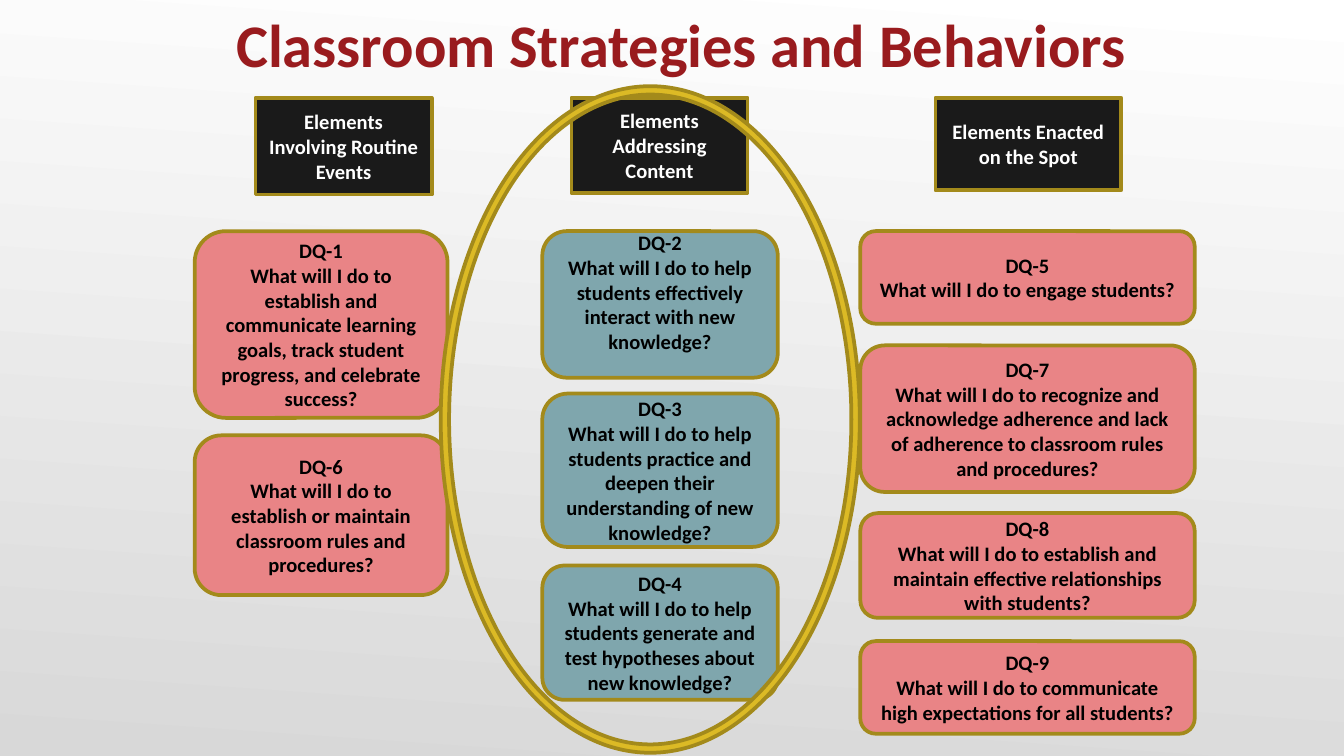
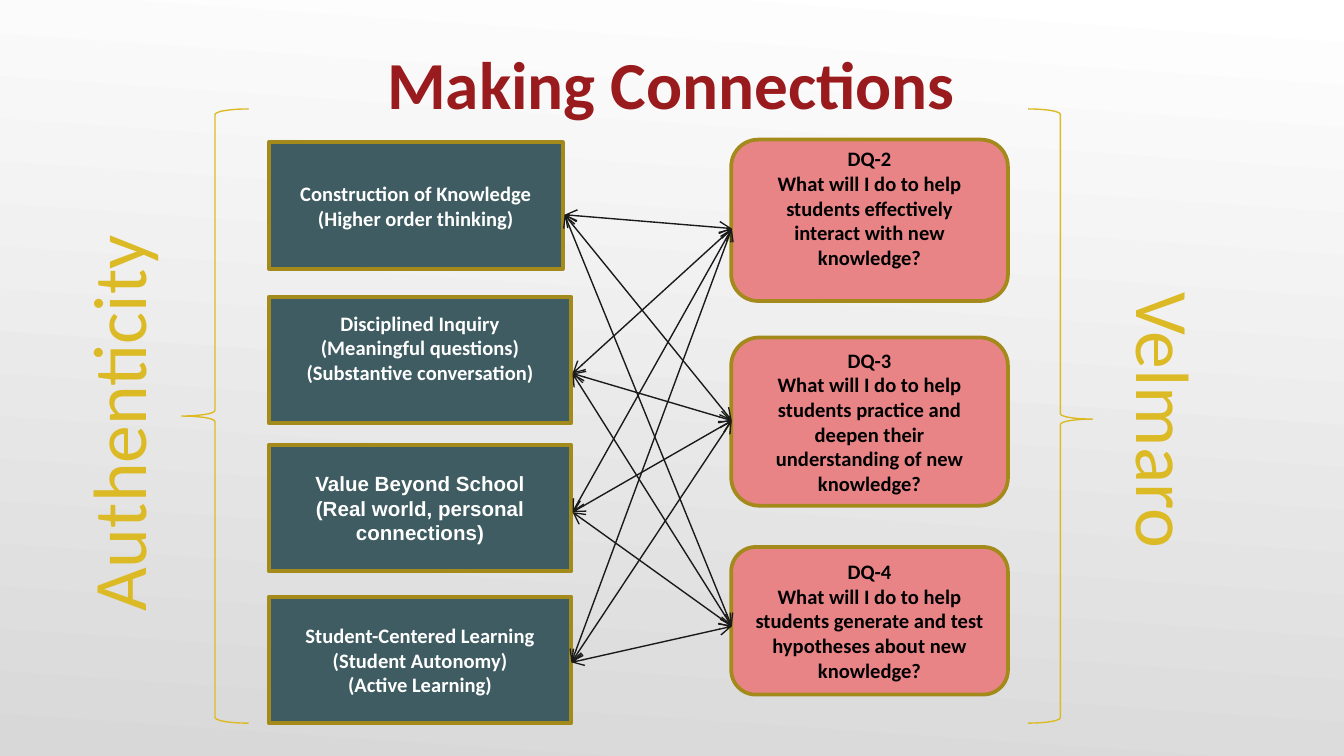
from itertools import product
from lxml.etree import SubElement as Sub
from pptx import Presentation
from pptx.dml.color import RGBColor as Rgb
from pptx.enum.shapes import MSO_CONNECTOR as Link, MSO_SHAPE as Form
from pptx.enum.text import MSO_ANCHOR as Anchor, PP_ALIGN as Align
from pptx.oxml.ns import qn
from pptx.util import Cm, Pt

WHITE = Rgb(0xFF, 0xFF, 0xFF)
GREY = Rgb(0xD8, 0xD8, 0xD8)
BLACK = Rgb(0, 0, 0)
INK = Rgb(0x1A, 0x1A, 0x1A)
RED = Rgb(0x99, 0x1B, 0x1E)
PINK = Rgb(0xE9, 0x84, 0x86)
BLUE = Rgb(0x7F, 0xA6, 0xAD)
TEAL = Rgb(0x3E, 0x5C, 0x61)
GOLD = Rgb(0xDC, 0xBA, 0x25)
EDGE = Rgb(0xA3, 0x8A, 0x1B)

ASKS = {
    1: "establish and communicate learning goals, track student progress, and celebrate success?",
    2: "help students effectively interact with new knowledge?",
    3: "help students practice and deepen their understanding of new knowledge?",
    4: "help students generate and test hypotheses about new knowledge?",
    5: "engage students?",
    6: "establish or maintain classroom rules and procedures?",
    7: "recognize and acknowledge adherence and lack of adherence to classroom rules and procedures?",
    8: "establish and maintain effective relationships with students?",
    9: "communicate high expectations for all students?",
}
HEADS = [
    ("Elements Involving Routine Events", (4.83, 1.85, 3.33, 1.83)),
    ("Elements Addressing Content", (10.8, 1.85, 3.33, 1.8)),
    ("Elements Enacted on the Spot", (17.68, 1.85, 3.51, 1.75)),
]
GROUPS = [
    (3.68, 4.78, PINK, [(1, 4.37, 3.53), (6, 8.23, 3.02)]),
    (10.25, 4.45, BLUE, [(2, 4.37, 2.77), (3, 7.44, 2.9), (4, 10.69, 2.54)]),
    (16.26, 6.32, PINK, [(5, 4.37, 1.75), (7, 6.53, 2.77), (8, 9.7, 1.98), (9, 12.12, 1.75)]),
]
RING = (8.33, 1.63, 7.92, 12.6)

TRAITS = [
    ("Construction of Knowledge\n(Higher order thinking)", 2.69, 5.56, "Calibri", 0),
    ("Disciplined Inquiry\n(Meaningful questions)\n(Substantive conversation)", 5.61, 5.72, "Calibri", 0.47),
    ("Value Beyond School\n(Real world, personal connections)", 8.41, 5.72, "Arial", 0),
    ("Student-Centered Learning\n(Student Autonomy)\n(Active Learning)", 11.28, 5.72, "Calibri", 0),
]
GOALS = (13.82, 5.23, PINK, [(2, 2.64, 3.05), (3, 6.38, 3.18), (4, 10.34, 2.79)])
STARTS = [(10.67, 4.06), (10.82, 7.06), (10.82, 9.68), (10.8, 12.52)]
ENDS = [(13.83, 4.32), (13.83, 7.95), (13.83, 11.84)]
BRACES = [
    (Form.LEFT_BRACE, (3.43, 2.06, 1.27, 11.61), 0.5),
    (Form.RIGHT_BRACE, (19.43, 2.06, 1.22, 11.61), 0.505),
]
SIDES = [
    ("Authenticity", (-1.73, 7.04, 7.85, 1.93), 270),
    ("Velmaro", (19.25, 6.99, 5.59, 1.93), 90),
]


def place(box):
    return [Cm(n) for n in box]


def write(shape, text, size, color, bold=True, font="Calibri", pads=(0.23, 0.13, 0.23, 0.13)):
    frame = shape.text_frame
    frame.text = text
    frame.word_wrap = True
    frame.vertical_anchor = Anchor.MIDDLE
    (frame.margin_left, frame.margin_top,
     frame.margin_right, frame.margin_bottom) = place(pads)
    for para in frame.paragraphs:
        para.alignment = Align.CENTER
        for run in para.runs:
            run.font.name = font
            run.font.size = Pt(size)
            run.font.bold = bold
            run.font.color.rgb = color


def draw(slide, form, box, fill=None, edge=EDGE, width=2):
    shape = slide.shapes.add_shape(form, *place(box))
    shape.shadow.inherit = False
    if fill is None:
        shape.fill.background()
    else:
        shape.fill.solid()
        shape.fill.fore_color.rgb = fill
    shape.line.color.rgb = edge
    shape.line.width = Pt(width)
    return shape


def label(slide, text, box, size, color, **style):
    shape = slide.shapes.add_textbox(*place(box))
    write(shape, text, size, color, **style)
    return shape


def stack(slide, left, width, fill, cards):
    for key, top, height in cards:
        card = draw(slide, Form.ROUNDED_RECTANGLE, (left, top, width, height), fill)
        low = 0.6 if key == 2 else 0.13
        write(card, f"DQ-{key}\nWhat will I do to {ASKS[key]}", 11, BLACK,
              pads=(0.23, 0.13, 0.23, low))


def arrow(slide, start, end):
    line = slide.shapes.add_connector(Link.STRAIGHT, *place(start + end))
    line.line.color.rgb = INK
    line.line.width = Pt(0.75)
    props = line.line._get_or_add_ln()
    for tag in ("a:headEnd", "a:tailEnd"):
        Sub(props, qn(tag), type="arrow")
    Sub(line._element.spPr, qn("a:effectLst"))


def start(deck, title, box, size):
    slide = deck.slides.add_slide(deck.slide_layouts[6])
    fill = slide.background.fill
    fill.gradient()
    fill.gradient_angle = 266
    for stop, spot, color in zip(fill.gradient_stops, (0, 1), (WHITE, GREY)):
        stop.position = spot
        stop.color.rgb = color
    label(slide, title, box, size, RED, pads=(0, 0.13, 0, 0))
    return slide


def plan(deck):
    slide = start(deck, "Classroom Strategies and Behaviors", (0.91, -0.06, 23.93, 1.63), 32.4)
    for text, box in HEADS:
        write(draw(slide, Form.RECTANGLE, box, INK), text, 11, WHITE)
    for group in GROUPS:
        stack(slide, *group)
    draw(slide, Form.DONUT, RING, GOLD).adjustments[0] = 0.02


def match(deck):
    slide = start(deck, "Making Connections", (4.11, 0.3, 17.15, 2.39), 36)
    for text, top, width, font, lift in TRAITS:
        box = draw(slide, Form.RECTANGLE, (5.08, top, width, 2.39), TEAL)
        write(box, text, 11, WHITE, font=font, pads=(0.23, 0.13, 0.23, 0.13 + lift))
    stack(slide, *GOALS)
    for pair in product(STARTS, ENDS):
        arrow(slide, *pair)
    for form, box, tip in BRACES:
        brace = draw(slide, form, box, edge=GOLD, width=0.75)
        brace.adjustments[0] = 0.083
        brace.adjustments[1] = tip
    for text, box, turn in SIDES:
        side = label(slide, text, box, 40.5, GOLD, bold=False, pads=(0.18, 0.1, 0.18, 0.1))
        side.text_frame.word_wrap = False
        side.rotation = turn


def main():
    deck = Presentation()
    deck.slide_width, deck.slide_height = Cm(25.4), Cm(14.29)
    plan(deck)
    match(deck)
    deck.save("out.pptx")


if __name__ == "__main__":
    main()
